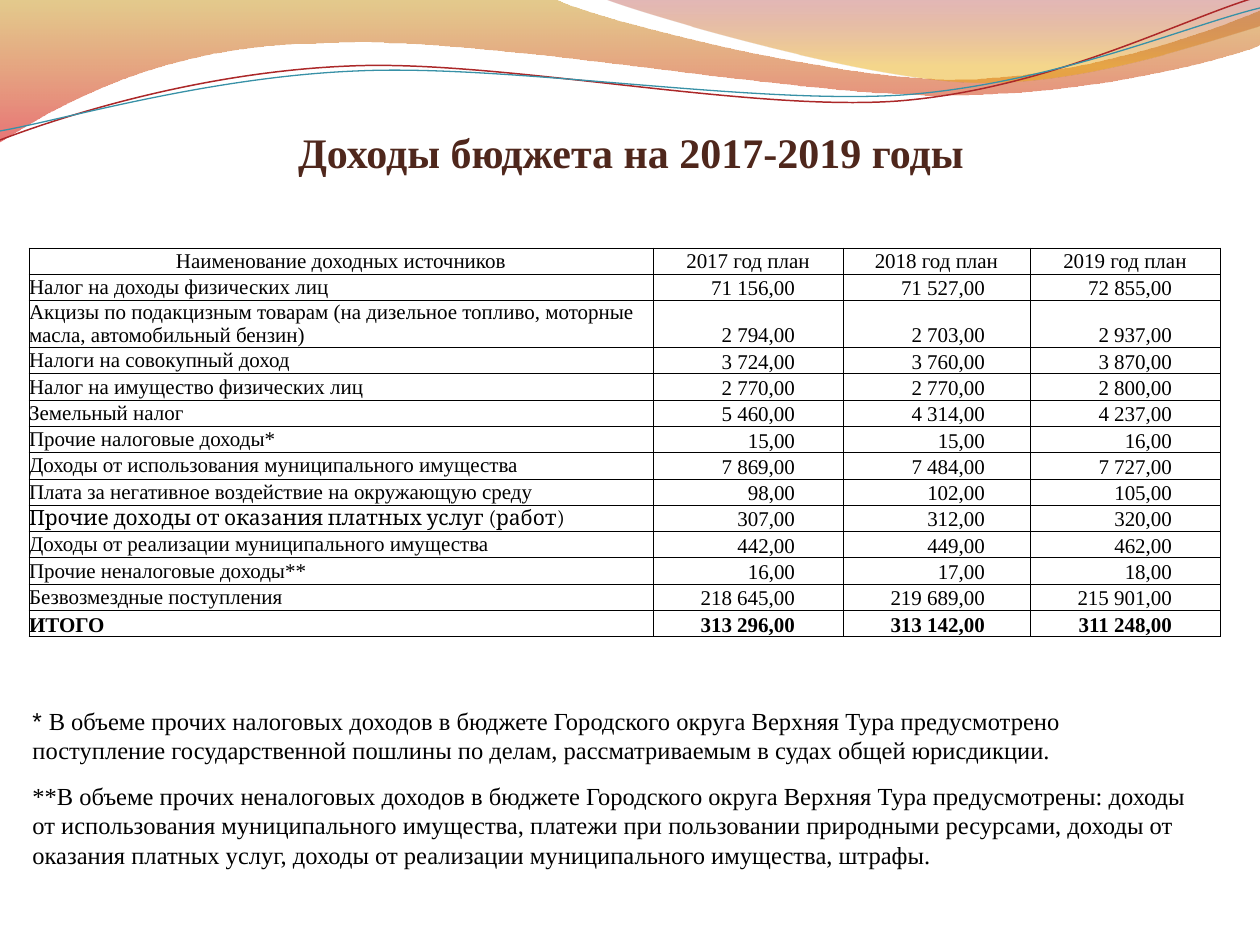
import pptx
import pptx.util
import pptx.dml.color
import pptx.enum.text
import pptx.oxml
import pptx.oxml.ns
import lxml.etree

RGB = pptx.dml.color.RGBColor
ALIGN = pptx.enum.text.PP_ALIGN
ANCHOR = pptx.enum.text.MSO_ANCHOR
qn = pptx.oxml.ns.qn
PX = 914400 / 126
SERIF = "Times New Roman"
BLACK = RGB(0x00, 0x00, 0x00)
BROWN = RGB(0x4F, 0x27, 0x1C)
GOLD = RGB(0xC3, 0x8B, 0x00)
RED = RGB(0xD6, 0x03, 0x05)
CRIMSON = RGB(0xA1, 0x11, 0x12)
AMBER = RGB(0xE9, 0xA6, 0x00)
DARK_RED = RGB(0xAC, 0x28, 0x29)
TEAL = RGB(0x38, 0x91, 0xA7)

TITLE = "Доходы бюджета на 2017-2019 годы"
HEADER = ("Наименование доходных источников", "2017 год план", "2018 год план", "2019 год план")
INCOME = [
    ("Налог на доходы физических лиц", "71 156,00", "71 527,00", "72 855,00"),
    ("Акцизы по подакцизным товарам (на дизельное топливо, моторные масла, автомобильный бензин)",
     "2 794,00", "2 703,00", "2 937,00"),
    ("Налоги на совокупный доход", "3 724,00", "3 760,00", "3 870,00"),
    ("Налог на имущество физических лиц", "2 770,00", "2 770,00", "2 800,00"),
    ("Земельный налог", "5 460,00", "4 314,00", "4 237,00"),
    ("Прочие налоговые доходы*", "15,00", "15,00", "16,00"),
    ("Доходы от использования муниципального имущества", "7 869,00", "7 484,00", "7 727,00"),
    ("Плата за негативное воздействие на окружающую среду", "98,00", "102,00", "105,00"),
    ("Прочие доходы от оказания платных услуг (работ)", "307,00", "312,00", "320,00"),
    ("Доходы от реализации муниципального имущества", "442,00", "449,00", "462,00"),
    ("Прочие неналоговые доходы**", "16,00", "17,00", "18,00"),
    ("Безвозмездные поступления", "218 645,00", "219 689,00", "215 901,00"),
]
TOTAL = ("ИТОГО", "313 296,00", "313 142,00", "311 248,00")
ROWS = [HEADER, *INCOME, TOTAL]
TALL_ROW, CAMBRIA_ROW, TOTAL_ROW = 2, 9, len(ROWS) - 1
COLUMNS = (624, 190, 187, 190)
VALUE_MARGINS = (0, 48, 45, 48)
TABLE_LEFT, TABLE_TOP, TABLE_HEIGHT, TALL_HEIGHT = 29, 248, 389, 47

NOTES = [
    ((20, 699, 1191, 72), [
        ("* ", "Arial"),
        ("В объеме прочих налоговых доходов в бюджете Городского округа Верхняя Тура "
         "предусмотрено поступление государственной пошлины по делам, рассматриваемым "
         "в судах общей юрисдикции.", SERIF)]),
    ((20, 774, 1201, 102), [
        ("**В объеме прочих неналоговых доходов в бюджете Городского округа Верхняя Тура "
         "предусмотрены: доходы от использования муниципального имущества, платежи при "
         "пользовании природными ресурсами, доходы от оказания платных услуг, доходы от "
         "реализации муниципального имущества, штрафы.", SERIF)]),
]

WAVES = [
    ([(0, -1), (554, -1), (600, 21, 837, 79, 955, 79), (1075, 79, 1207, 33, 1260, 11),
      (1261, 45), (1239, 55, 1096, 96, 940, 95), (784, 95, 481, 35, 324, 43),
      (163, 44, 58, 105, -1, 142)],
     [(0, GOLD, 45), (1, RED, 55)]),
    ([(604, -1), (641, 14, 859, 78, 969, 82), (1079, 87, 1211, 40, 1260, 26), (1260, 0)],
     [(0, CRIMSON, 30), (0.8, AMBER, 45)]),
]
STRANDS = [
    ([(0, 140), (60, 117, 199, 72, 349, 66), (498, 59, 747, 112, 898, 101),
      (1050, 89, 1182, 19, 1257, -3)], DARK_RED, 0.85),
    ([(0, 131), (59, 121, 207, 77, 357, 71), (508, 64, 752, 105, 903, 95),
      (1053, 84, 1186, 26, 1260, 8)], TEAL, 0.75),
]


def px(*lengths):
    return [pptx.util.Emu(round(n * PX)) for n in lengths]


def add_outline(s, outline, close):
    corners = [px(*seg[-2:]) for seg in outline]
    builder = s.shapes.build_freeform(*corners[0], scale=1.0)
    builder.add_line_segments(corners[1:], close=close)
    sp = builder.convert_to_shape()
    sp.shadow.inherit = False
    lines = list(sp.element.iter(qn("a:lnTo")))
    for line, seg in zip(lines, outline[1:]):
        if len(seg) == 6:
            curve = lxml.etree.Element(qn("a:cubicBezTo"))
            for x, y in (px(*seg[:2]), px(*seg[2:4]), px(*seg[4:])):
                lxml.etree.SubElement(curve, qn("a:pt"),
                                      x=str(x - sp.left), y=str(y - sp.top))
            line.getparent().replace(line, curve)
    return sp


def add_wave(s, outline, stops):
    sp = add_outline(s, outline, True)
    sp.line.fill.background()
    sp.fill.gradient()
    sp.fill.gradient_angle = 270
    for stop, (position, color, _) in zip(sp.fill.gradient_stops, stops):
        stop.position = position
        stop.color.rgb = color
    for clr, (_, _, opacity) in zip(sp.element.iter(qn("a:srgbClr")), stops):
        lxml.etree.SubElement(clr, qn("a:alpha"), val=str(opacity * 1000))


def add_strand(s, outline, color, width):
    sp = add_outline(s, outline, False)
    sp.fill.background()
    sp.line.color.rgb = color
    sp.line.width = pptx.util.Pt(width)


def style(r, size, font=SERIF, color=BLACK, bold=False):
    r.font.size = pptx.util.Pt(size)
    r.font.name = font
    r.font.color.rgb = color
    r.font.bold = bold


def add_borders(cell):
    tcPr = cell._tc.get_or_add_tcPr()
    for i, side in enumerate(("lnL", "lnR", "lnT", "lnB")):
        tcPr.insert(i, pptx.oxml.parse_xml(
            f'<a:{side} {pptx.oxml.ns.nsdecls("a")} w="6350"><a:solidFill>'
            f'<a:srgbClr val="{BLACK}"/></a:solidFill></a:{side}>'))


def fill_cell(cell, text, row, col):
    cell.fill.background()
    add_borders(cell)
    is_value = row > 0 and col > 0
    cell.margin_left = cell.margin_top = cell.margin_bottom = 0
    cell.margin_right = px(VALUE_MARGINS[col])[0] if is_value else 0
    cell.vertical_anchor = ANCHOR.BOTTOM if is_value or row == TOTAL_ROW else ANCHOR.MIDDLE
    p = cell.text_frame.paragraphs[0]
    p.text = text
    p.alignment = ALIGN.CENTER if row == 0 else ALIGN.RIGHT if is_value else ALIGN.LEFT
    font = "Cambria" if (row, col) == (CAMBRIA_ROW, 0) else SERIF
    style(p.runs[0], 12, font, bold=row == TOTAL_ROW)


def add_income_table(s):
    frame = s.shapes.add_table(len(ROWS), len(COLUMNS),
                               *px(TABLE_LEFT, TABLE_TOP, sum(COLUMNS), TABLE_HEIGHT))
    table = frame.table
    table.first_row = table.horz_banding = False
    for column, width in zip(table.columns, px(*COLUMNS)):
        column.width = width
    row_height = (TABLE_HEIGHT - TALL_HEIGHT) / (len(ROWS) - 1)
    for i, texts in enumerate(ROWS):
        table.rows[i].height = px(TALL_HEIGHT if i == TALL_ROW else row_height)[0]
        for j, text in enumerate(texts):
            fill_cell(table.cell(i, j), text, i, j)


def add_note(s, box, parts):
    tf = s.shapes.add_textbox(*px(*box)).text_frame
    tf.word_wrap = True
    tf.vertical_anchor = ANCHOR.MIDDLE
    for text, font in parts:
        r = tf.paragraphs[0].add_run()
        r.text = text
        style(r, 14, font)


def set_title(s):
    title = s.shapes.title
    title.left, title.top, title.width, title.height = px(59, 89, 1144, 88)
    tf = title.text_frame
    tf.text = TITLE
    tf.vertical_anchor = ANCHOR.BOTTOM
    tf.margin_left = tf.margin_right = tf.margin_bottom = 0
    tf.paragraphs[0].alignment = ALIGN.CENTER
    style(tf.paragraphs[0].runs[0], 24, color=BROWN, bold=True)
    s.shapes.element.append(title.element)


def main():
    prs = pptx.Presentation()
    prs.slide_width, prs.slide_height = px(1260, 945)
    s = prs.slides.add_slide(prs.slide_layouts[5])
    for wave in WAVES:
        add_wave(s, *wave)
    for strand in STRANDS:
        add_strand(s, *strand)
    set_title(s)
    add_income_table(s)
    for note in NOTES:
        add_note(s, *note)
    prs.save("out.pptx")


if __name__ == "__main__":
    main()
